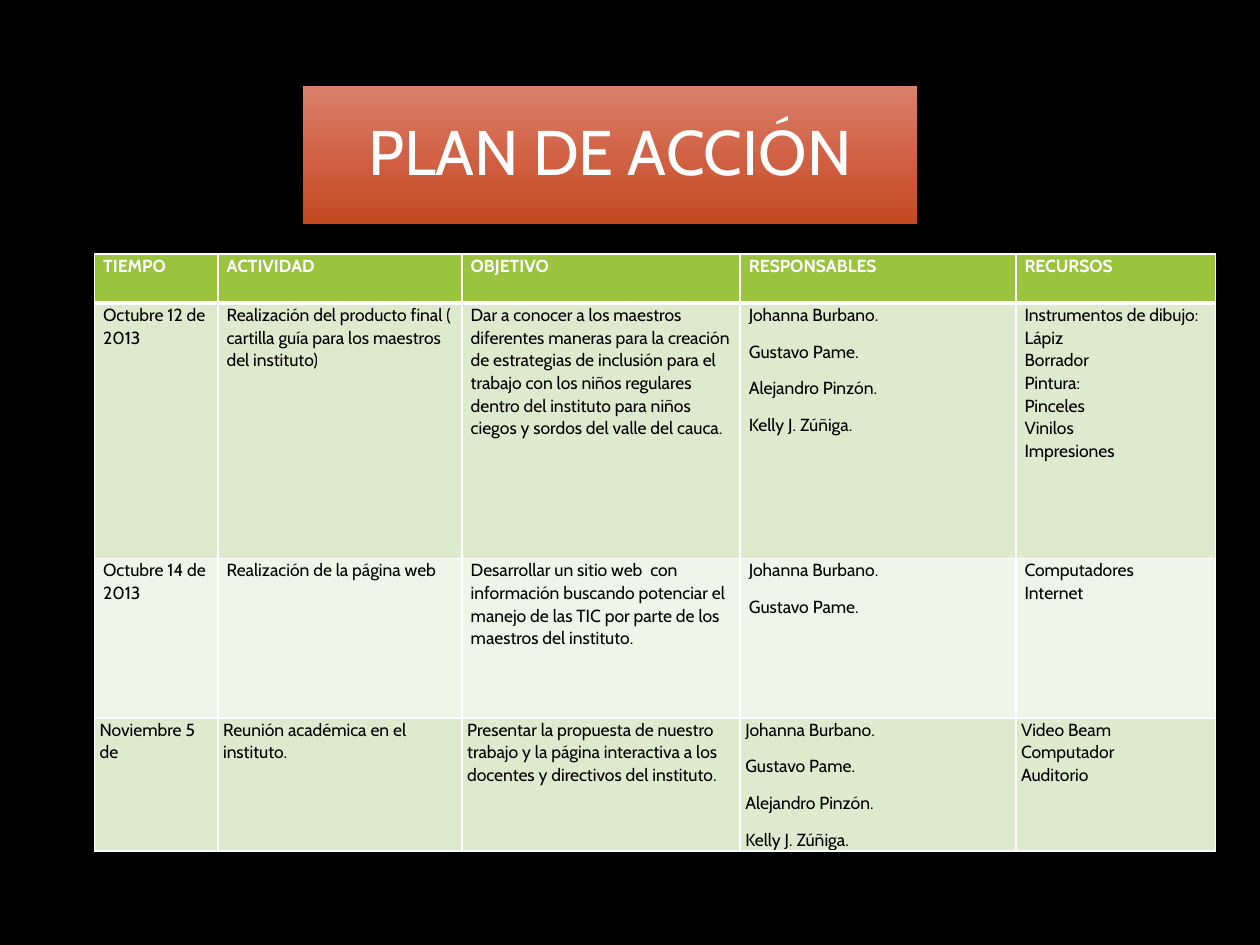
from copy import deepcopy

from pptx import Presentation
from pptx.dml.color import RGBColor
from pptx.enum.shapes import MSO_SHAPE
from pptx.enum.text import MSO_ANCHOR, PP_ALIGN
from pptx.oxml import parse_xml
from pptx.oxml.ns import nsdecls, qn
from pptx.util import Pt

BLACK = RGBColor(0x00, 0x00, 0x00)
WHITE = RGBColor(0xFF, 0xFF, 0xFF)
GREEN = RGBColor(0x9A, 0xC4, 0x3E)
BAND_DARK = RGBColor(0xDE, 0xEA, 0xCE)
BAND_LIGHT = RGBColor(0xEF, 0xF5, 0xE8)
TITLE_GRADIENT = [
    (0, RGBColor(0xD9, 0x80, 0x6C)),
    (0.5, RGBColor(0xD2, 0x62, 0x45)),
    (1, RGBColor(0xC3, 0x48, 0x22)),
]

TITLE_BOX = (173, 49, 351, 79)
PLAN_BOX = (54, 145.25, 640.5, 334.5)
COLUMN_WIDTHS = [70.5, 139.5, 159, 157.5, 114]
ROW_HEIGHTS = [28, 146, 91, 76]
CELL_INSETS = [5, 5, 5, 3]
RESPONSIBLE_COLUMN = 3

TEAM = ["Johanna Burbano.", "Gustavo Pame.", "Alejandro Pinzón.", "Kelly J. Zúñiga."]
PLAN = [
    [["TIEMPO"], ["ACTIVIDAD"], ["OBJETIVO"], ["RESPONSABLES"], ["RECURSOS"]],
    [
        ["Octubre 12 de 2013"],
        ["Realización del producto final ( cartilla guía para los maestros del instituto)"],
        ["Dar a conocer a los maestros diferentes maneras para la creación de estrategias "
         "de inclusión para el trabajo con los niños regulares dentro del instituto para "
         "niños ciegos y sordos del valle del cauca."],
        TEAM,
        ["Instrumentos de dibujo:", "Lápiz", "Borrador", "Pintura:", "Pinceles",
         "Vinilos", "Impresiones"],
    ],
    [
        ["Octubre 14 de 2013"],
        ["Realización de la página web"],
        ["Desarrollar un sitio web  con información buscando potenciar el manejo de las "
         "TIC por parte de los maestros del instituto."],
        TEAM[:2],
        ["Computadores", "Internet"],
    ],
    [
        ["Noviembre 5 de"],
        ["Reunión académica en el instituto."],
        ["Presentar la propuesta de nuestro trabajo y la página interactiva a los "
         "docentes y directivos del instituto."],
        TEAM,
        ["Video Beam", "Computador", "Auditorio"],
    ],
]


def apply_format(target, values):
    """Set each named attribute of the target."""
    for name, value in values.items():
        setattr(target, name, value)


def format_font(font, size, color, bold=False):
    """Set the face, size, weight and colour of a font."""
    apply_format(font, {"name": "Cabin", "size": Pt(size), "bold": bold})
    font.color.rgb = color


def add_title(slide, box):
    """Place the title banner in the box."""
    banner = slide.shapes.add_shape(MSO_SHAPE.RECTANGLE, *map(Pt, box))
    banner.shadow.inherit = False
    banner.line.fill.background()
    banner.fill.gradient()
    banner.fill.gradient_angle = 270
    first_stop = banner.fill.gradient_stops[0]._gs
    first_stop.addnext(deepcopy(first_stop))
    for stop, (position, color) in zip(banner.fill.gradient_stops, TITLE_GRADIENT):
        stop.position = position
        stop.color.rgb = color
    apply_format(banner.text_frame, {"word_wrap": True, "vertical_anchor": MSO_ANCHOR.MIDDLE})
    heading = banner.text_frame.paragraphs[0]
    apply_format(heading, {"text": "PLAN DE ACCIÓN", "alignment": PP_ALIGN.CENTER,
                           "line_spacing": 0.9})
    format_font(heading.font, 36, WHITE)


def add_borders(cell, top, bottom):
    """Draw white borders, with the given top and bottom widths in points."""
    properties = cell._tc.get_or_add_tcPr()
    for side, width in {"L": 1, "R": 1, "T": top, "B": bottom}.items():
        properties.append(parse_xml(
            f'<a:ln{side} {nsdecls("a")} w="{Pt(width)}"><a:solidFill>'
            f'<a:srgbClr val="{WHITE}"/></a:solidFill></a:ln{side}>'))


def fill_cell(cell, entries, row, column):
    """Write the entries of one plan cell and give it its row style."""
    is_header = row == 0
    add_borders(cell, 3 if row == 1 else 1, 3 if is_header else 1)
    cell.fill.solid()
    cell.fill.fore_color.rgb = GREEN if is_header else BAND_DARK if row % 2 else BAND_LIGHT
    inset = Pt(CELL_INSETS[row])
    apply_format(cell, {"margin_left": inset, "margin_right": inset,
                        "margin_top": 0, "margin_bottom": 0})
    cell.text_frame.text = "\n".join(entries)
    for index, paragraph in enumerate(cell.text_frame.paragraphs, 1):
        spaced = column == RESPONSIBLE_COLUMN and index < len(entries)
        apply_format(paragraph, {"line_spacing": 1.07, "space_after": Pt(8 if spaced else 0)})
        format_font(paragraph.font, 10, WHITE if is_header else BLACK, is_header)


def add_plan(slide, box):
    """Place the action plan table in the box."""
    plan = slide.shapes.add_table(len(PLAN), len(COLUMN_WIDTHS), *map(Pt, box)).table
    apply_format(plan, {"first_row": False, "horz_banding": False})
    for column, width in zip(plan.columns, COLUMN_WIDTHS):
        column.width = Pt(width)
    for row, height in zip(plan.rows, ROW_HEIGHTS):
        row.height = Pt(height)
    for row, activities in enumerate(PLAN):
        for column, entries in enumerate(activities):
            fill_cell(plan.cell(row, column), entries, row, column)


def main():
    """Build and save the action plan slide."""
    deck = Presentation()
    apply_format(deck, {"slide_width": Pt(720), "slide_height": Pt(540)})
    slide = deck.slides.add_slide(deck.slide_layouts[6])
    slide.background.fill.solid()
    slide.background.fill.fore_color.rgb = BLACK
    add_title(slide, TITLE_BOX)
    add_plan(slide, PLAN_BOX)
    deck.save("out.pptx")


if __name__ == "__main__":
    main()
